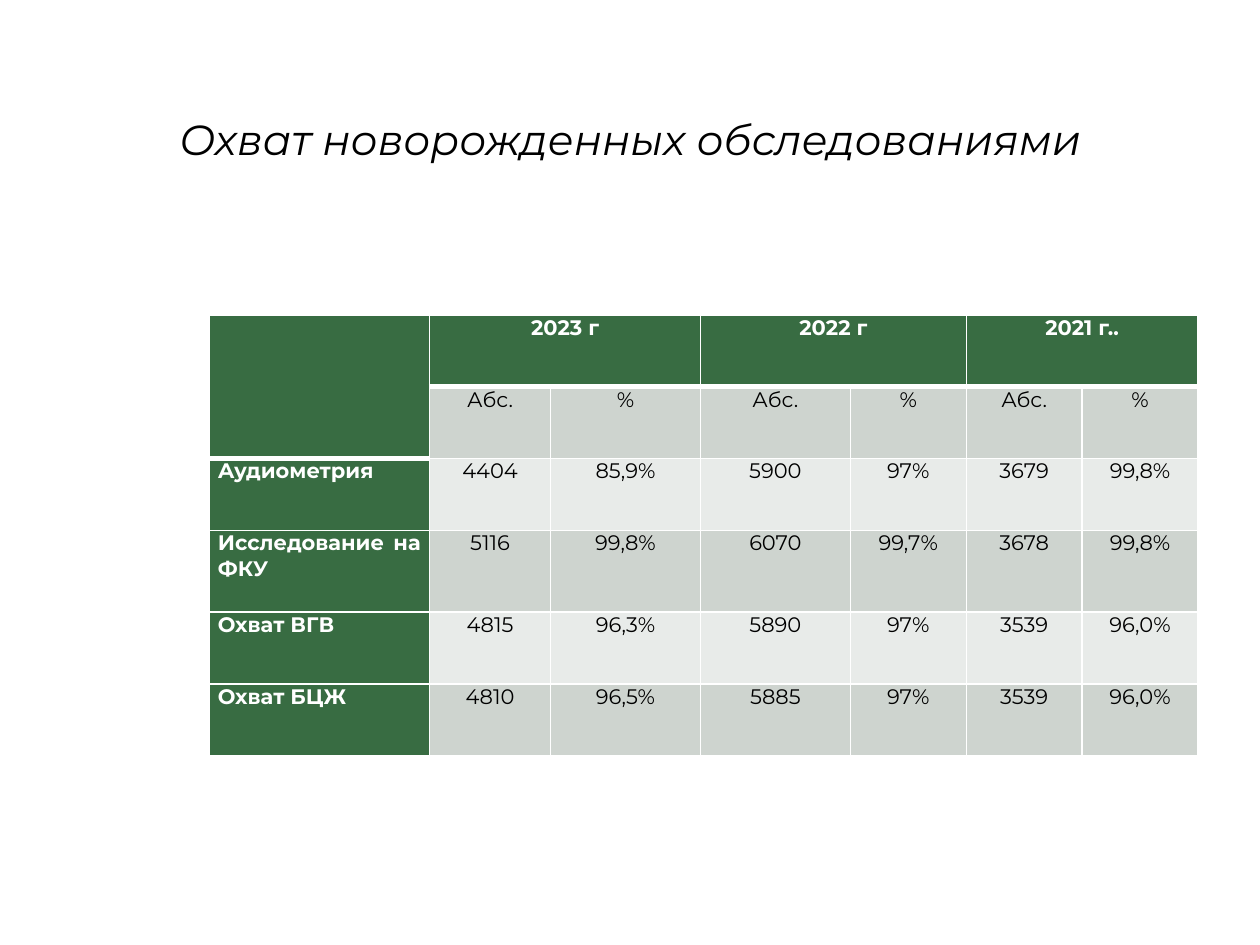
from lxml import etree
from pptx import Presentation
from pptx.dml.color import RGBColor
from pptx.enum import text
from pptx.oxml import ns
from pptx.util import Inches, Pt

TITLE = "Охват новорожденных обследованиями"
YEARS = ["2023 г", "2022 г", "2021 г.."]
MEASURES = ["Абс.", "%"]
ROWS = [
    ("Аудиометрия", "4404", "85,9%", "5900", "97%", "3679", "99,8%"),
    ("Исследование на ФКУ", "5116", "99,8%", "6070", "99,7%", "3678", "99,8%"),
    ("Охват ВГВ", "4815", "96,3%", "5890", "97%", "3539", "96,0%"),
    ("Охват БЦЖ", "4810", "96,5%", "5885", "97%", "3539", "96,0%"),
]
COLUMN_WIDTHS = [1.75, 0.96, 1.19, 1.19, 0.92, 0.92, 0.92]
ROW_HEIGHTS = [0.57, 0.57, 0.57, 0.65, 0.57, 0.57]

FONT = "Montserrat"
BLACK = RGBColor(0x00, 0x00, 0x00)
WHITE = RGBColor(0xFF, 0xFF, 0xFF)
GREEN = RGBColor(0x38, 0x6C, 0x42)
BANDS = [RGBColor(0xE8, 0xEB, 0xE9), RGBColor(0xCE, 0xD4, 0xCF)]


def write(para, words, size, color, bold=False, italic=False):
    span = para.add_run()
    span.text = words
    span.font.name = FONT
    span.font.size = Pt(size)
    span.font.color.rgb = color
    span.font.bold = bold
    span.font.italic = italic


def draw_border(cell, side, width):
    line = etree.SubElement(cell._tc.get_or_add_tcPr(), ns.qn(f"a:{side}"), w=str(Pt(width)))
    fill = etree.SubElement(line, ns.qn("a:solidFill"))
    etree.SubElement(fill, ns.qn("a:srgbClr"), val=str(WHITE))


def format_cell(cell, row, column, words):
    heading = row == 0 or column == 0
    last_heading_row = 1 if column == 0 else 0
    top = 3 if row == last_heading_row + 1 else 1
    bottom = 3 if row == last_heading_row or (row, column) == (0, 0) else 1
    for side, width in (("lnL", 1), ("lnR", 1), ("lnT", top), ("lnB", bottom)):
        draw_border(cell, side, width)
    cell.fill.solid()
    cell.fill.fore_color.rgb = GREEN if heading else BANDS[row % 2]
    cell.margin_left = cell.margin_right = Inches(0.07)
    cell.margin_top = cell.margin_bottom = 0
    if words:
        para = cell.text_frame.paragraphs[0]
        para.alignment = text.PP_ALIGN.JUSTIFY if column == 0 else text.PP_ALIGN.CENTER
        write(para, words, 12, WHITE if heading else BLACK, bold=heading)


def add_title(page):
    title = page.shapes.title
    title.left, title.top = Inches(0.69), Inches(0.4)
    title.width, title.height = Inches(8.62), Inches(1.45)
    title.text_frame.vertical_anchor = text.MSO_ANCHOR.MIDDLE
    para = title.text_frame.paragraphs[0]
    para.alignment = text.PP_ALIGN.CENTER
    para.line_spacing = 0.9
    write(para, TITLE, 24, BLACK, italic=True)


def add_coverage_table(page):
    year_row = [""]
    for year in YEARS:
        year_row += [year, ""]
    grid = [year_row, ["", *MEASURES * len(YEARS)], *ROWS]
    table = page.shapes.add_table(
        len(grid), len(COLUMN_WIDTHS), Inches(1.66), Inches(2.5),
        Inches(sum(COLUMN_WIDTHS)), Inches(sum(ROW_HEIGHTS)),
    ).table
    table.first_col = True
    for column, width in zip(table.columns, COLUMN_WIDTHS):
        column.width = Inches(width)
    for row, height in zip(table.rows, ROW_HEIGHTS):
        row.height = Inches(height)
    for row, values in enumerate(grid):
        for column, words in enumerate(values):
            format_cell(table.cell(row, column), row, column, words)
    table.cell(0, 0).merge(table.cell(1, 0))
    for column in range(1, len(COLUMN_WIDTHS), len(MEASURES)):
        table.cell(0, column).merge(table.cell(0, column + 1))


def main():
    deck = Presentation()
    deck.slide_width, deck.slide_height = Inches(10), Inches(7.5)
    page = deck.slides.add_slide(deck.slide_layouts[5])
    add_title(page)
    add_coverage_table(page)
    deck.save("out.pptx")


if __name__ == "__main__":
    main()
